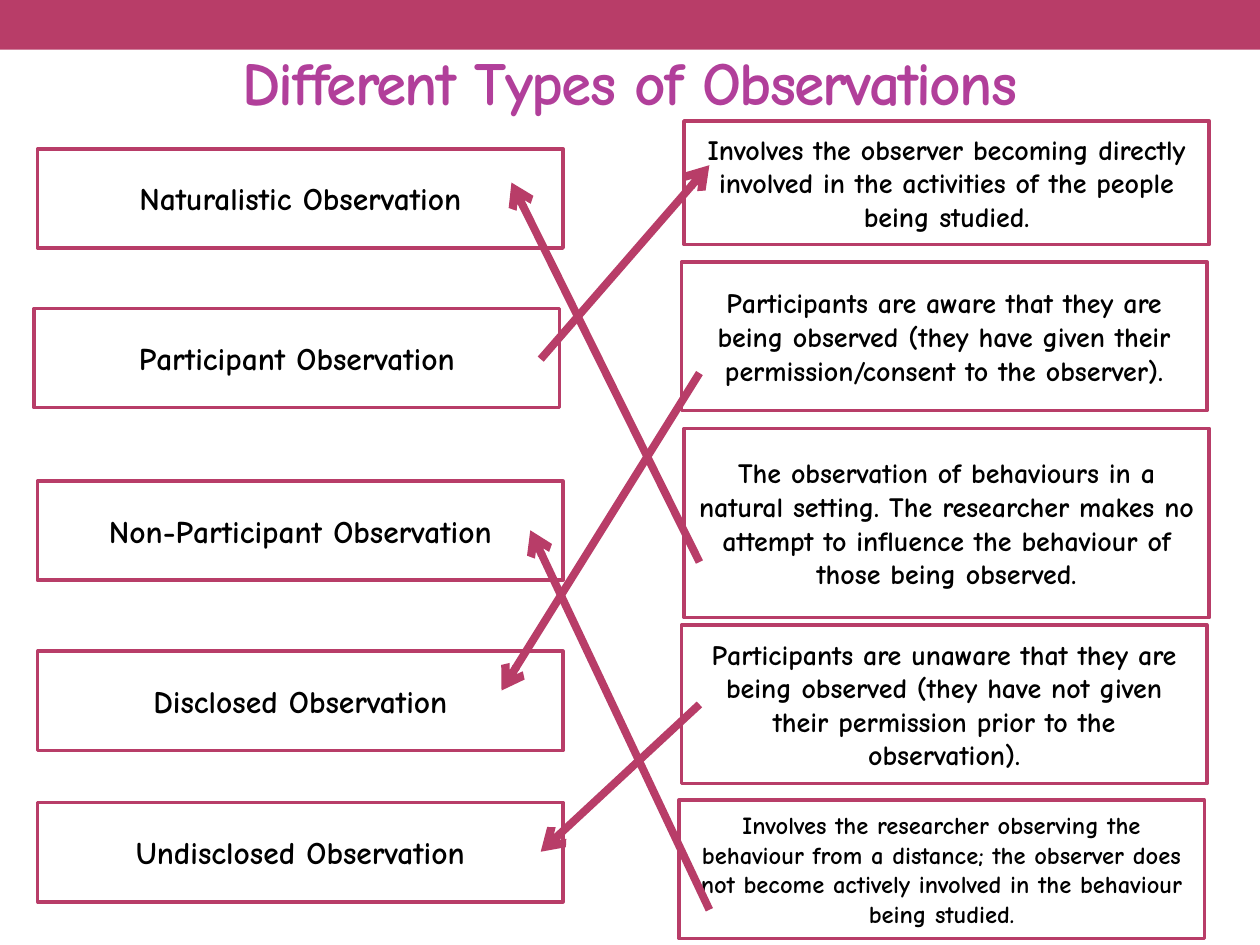
from dataclasses import dataclass

from lxml import etree
from pptx import Presentation
from pptx.dml.color import RGBColor
from pptx.enum.shapes import MSO_CONNECTOR, MSO_SHAPE
from pptx.enum.text import MSO_ANCHOR, PP_ALIGN
from pptx.oxml.ns import qn
from pptx.util import Cm, Pt

RECTANGLE = MSO_SHAPE.RECTANGLE
STRAIGHT = MSO_CONNECTOR.STRAIGHT
MIDDLE = MSO_ANCHOR.MIDDLE
CENTER = PP_ALIGN.CENTER


@dataclass(frozen=True)
class Theme:
    font: str = "Comic Neue"
    accent: RGBColor = RGBColor(0xB8, 0x3D, 0x68)
    title: RGBColor = RGBColor(0xB1, 0x3F, 0x9A)
    text: RGBColor = RGBColor(0, 0, 0)
    background: RGBColor = RGBColor(0xFF, 0xFF, 0xFF)
    title_size: int = 35
    term_size: int = 18
    definition_size: int = 16
    small_size: int = 14
    outline: float = 2.08
    arrow: float = 4.5


THEME = Theme()
BOX_WIDTH = 10.59
TERM_HEIGHT = 2

# left, top, wording
TERMS = [
    (0.76, 3.0, "Naturalistic Observation"),
    (0.69, 6.22, "Participant Observation"),
    (0.76, 9.7, "Non-Participant Observation"),
    (0.76, 13.13, "Disclosed Observation"),
    (0.76, 16.18, "Undisclosed Observation"),
]

# left, top, height, type size, wording
DEFINITIONS = [
    (13.79, 2.44, 2.49, THEME.definition_size,
     "Involves the observer becoming directly involved in the activities "
     "of the people being studied."),
    (13.74, 5.28, 3.0, THEME.definition_size,
     "Participants are aware that they are being observed (they have given "
     "their permission/consent to the observer)."),
    (13.79, 8.64, 3.81, THEME.definition_size,
     "The observation of behaviours in a natural setting. The researcher "
     "makes no attempt to influence the behaviour of those being observed."),
    (13.74, 12.6, 3.2, THEME.definition_size,
     "Participants are unaware that they are being observed (they have not "
     "given their permission prior to the observation)."),
    (13.69, 16.13, 2.79, THEME.small_size,
     "Involves the researcher observing the behaviour from a distance; the "
     "observer does not become actively involved in the behaviour being studied."),
]

# start x, start y, end x, end y
MATCHES = [
    (10.9, 7.24, 14.3, 3.33),
    (14.1, 7.52, 10.11, 13.92),
    (14.1, 11.33, 10.31, 3.68),
    (14.1, 14.2, 10.9, 17.17),
    (14.3, 18.34, 10.69, 10.69),
]


def write_text(shape, text, size, color):
    """Put one bold, centred paragraph in the shape and return its run."""
    frame = shape.text_frame
    frame.text = text
    frame.word_wrap = True
    frame.vertical_anchor = MIDDLE
    paragraph = frame.paragraphs[0]
    paragraph.alignment = CENTER
    run = paragraph.runs[0]
    run.font.name = THEME.font
    run.font.size = Pt(size)
    run.font.bold = True
    run.font.color.rgb = color
    return run


def add_rectangle(slide, left, top, width, height, fill):
    shape = slide.shapes.add_shape(
        RECTANGLE, Cm(left), Cm(top), Cm(width), Cm(height))
    shape.shadow.inherit = False
    shape.fill.solid()
    shape.fill.fore_color.rgb = fill
    return shape


def add_banner(slide):
    banner = add_rectangle(slide, 0, 0, 25.4, 1.0, THEME.accent)
    banner.line.fill.background()


def add_title(slide, text):
    title = slide.shapes.add_textbox(Cm(1.27), Cm(0.76), Cm(22.86), Cm(1.75))
    run = write_text(title, text, THEME.title_size, THEME.title)
    run.font._element.set("spc", "-100")


def add_box(slide, left, top, height, size, text):
    box = add_rectangle(slide, left, top, BOX_WIDTH, height, THEME.background)
    box.line.color.rgb = THEME.accent
    box.line.width = Pt(THEME.outline)
    write_text(box, text, size, THEME.text)


def add_arrow(slide, *ends):
    arrow = slide.shapes.add_connector(STRAIGHT, *(Cm(end) for end in ends))
    arrow.line.color.rgb = THEME.accent
    arrow.line.width = Pt(THEME.arrow)
    properties = arrow._element.spPr
    etree.SubElement(properties.find(qn("a:ln")), qn("a:tailEnd"), type="arrow")
    etree.SubElement(properties, qn("a:effectLst"))


def main():
    presentation = Presentation()
    presentation.slide_width = Cm(25.4)
    presentation.slide_height = Cm(19.05)
    slide = presentation.slides.add_slide(presentation.slide_layouts[6])

    add_banner(slide)
    add_title(slide, "Different Types of Observations")
    for left, top, text in TERMS:
        add_box(slide, left, top, TERM_HEIGHT, THEME.term_size, text)
    for definition in DEFINITIONS:
        add_box(slide, *definition)
    for match in MATCHES:
        add_arrow(slide, *match)

    presentation.save("out.pptx")


if __name__ == "__main__":
    main()
